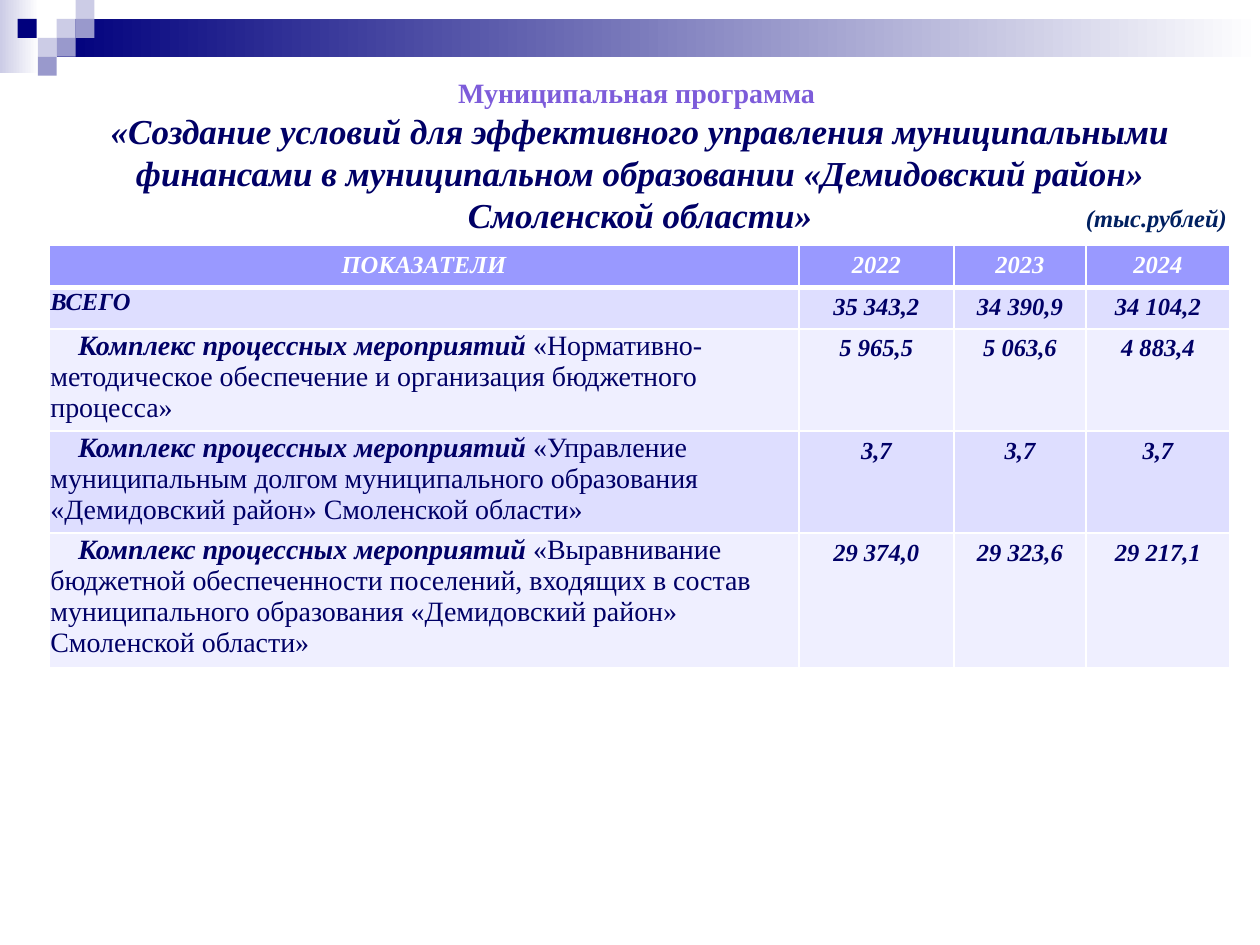
from dataclasses import dataclass

from lxml import etree
from pptx import Presentation
from pptx.dml.color import RGBColor
from pptx.enum.shapes import MSO_SHAPE
from pptx.enum.text import MSO_AUTO_SIZE, PP_ALIGN
from pptx.oxml.ns import qn
from pptx.util import Inches, Pt

RECTANGLE = MSO_SHAPE.RECTANGLE
CENTER, LEFT = PP_ALIGN.CENTER, PP_ALIGN.LEFT
FIT_SHAPE = MSO_AUTO_SIZE.SHAPE_TO_FIT_TEXT


@dataclass(frozen=True)
class Theme:
    font: str = "Times New Roman"
    navy: str = "00007D"
    lilac: str = "CCCCE6"
    lavender: str = "9999CC"
    white: str = "FFFFFF"
    ink: str = "000066"
    violet: str = "7D5CDA"
    unit_ink: str = "002060"
    header_fill: str = "9999FF"
    band_fills: tuple[str, str] = ("DEDEFF", "EFEFFF")
    small: int = 14
    body: int = 16
    title: int = 20


THEME = Theme()


@dataclass(frozen=True)
class Block:
    left: float
    top: float
    width: float
    height: float
    color: str
    fade_to: str | None = None


@dataclass(frozen=True)
class Span:
    text: str
    color: str = THEME.ink
    size: int = THEME.small
    bold: bool = True
    italic: bool = True


@dataclass(frozen=True)
class Indicator:
    label: tuple[Span, ...]
    values: tuple[str, str, str]
    height: float
    indent: float = 0


def measure(goal: str, values: tuple[str, str, str], height: float) -> Indicator:
    label = (Span("Комплекс процессных мероприятий ", size=THEME.body),
             Span(goal, size=THEME.body, bold=False, italic=False))
    return Indicator(label, values, height, indent=0.22)


# Corner ornament: bars first, then the small squares
TILE = 0.15
BLOCKS = (
    Block(0, 0, 0.31, 0.58, THEME.lilac, THEME.white),
    Block(0.45, 0.15, 9.55, 0.3, THEME.navy, THEME.white),
    *(Block(left, top, TILE, TILE, color) for left, top, color in (
        (0.45, 0.15, THEME.lilac), (0.6, 0, THEME.lilac),
        (0.6, 0.15, THEME.lavender), (0.3, 0.3, THEME.lilac),
        (0.14, 0.15, THEME.navy), (0.45, 0.3, THEME.lavender),
        (0.3, 0.45, THEME.lavender))),
)

TITLE = (
    Span("Муниципальная программа ", THEME.violet, THEME.body, italic=False),
    Span("«Создание условий для эффективного управления муниципальными финансами "
         "в муниципальном образовании «Демидовский район» Смоленской области»",
         size=THEME.title),
)
UNIT = Span("(тыс.рублей)", THEME.unit_ink)

# Table content
COLUMN_WIDTHS = (5.95, 1.23, 1.05, 1.14)
HEADER_HEIGHT = 0.33
HEADINGS = ("ПОКАЗАТЕЛИ", "2022", "2023", "2024")
INDICATORS = (
    Indicator((Span("ВСЕГО"),), ("35 343,2", "34 390,9", "34 104,2"), 0.33),
    measure("«Нормативно-методическое обеспечение и организация бюджетного процесса»",
            ("5 965,5", "5 063,6", "4 883,4"), 0.81),
    measure("«Управление муниципальным долгом муниципального образования "
            "«Демидовский район» Смоленской области»", ("3,7", "3,7", "3,7"), 0.81),
    measure("«Выравнивание бюджетной обеспеченности поселений, входящих в состав "
            "муниципального образования «Демидовский район» Смоленской области»",
            ("29 374,0", "29 323,6", "29 217,1"), 1.07),
)
LABEL_MARGINS = {"margin_left": Inches(0.01), "margin_top": Inches(0.01),
                 "margin_right": Inches(0.01), "margin_bottom": 0}


def apply_format(target, values: dict) -> None:
    for name, value in values.items():
        setattr(target, name, value)


def write_spans(paragraph, spans: tuple[Span, ...], align) -> None:
    paragraph.alignment = align
    for span in spans:
        run = paragraph.add_run()
        run.text = span.text
        apply_format(run.font, {"name": THEME.font, "size": Pt(span.size),
                                "bold": span.bold, "italic": span.italic})
        run.font.color.rgb = RGBColor.from_string(span.color)


def draw_block(slide, block: Block) -> None:
    shape = slide.shapes.add_shape(
        RECTANGLE, Inches(block.left), Inches(block.top),
        Inches(block.width), Inches(block.height))
    shape.shadow.inherit = False
    shape.line.fill.background()
    if block.fade_to is None:
        shape.fill.solid()
        shape.fill.fore_color.rgb = RGBColor.from_string(block.color)
        return
    shape.fill.gradient()
    shape.fill.gradient_angle = 0
    for stop, position, color in zip(shape.fill.gradient_stops, (0, 1),
                                     (block.color, block.fade_to)):
        stop.position = position
        stop.color.rgb = RGBColor.from_string(color)


def draw_text(slide, left: float, top: float, width: float, height: float,
              lines: tuple[Span, ...], align, wrap: bool) -> None:
    box = slide.shapes.add_textbox(Inches(left), Inches(top), Inches(width), Inches(height))
    frame = box.text_frame
    apply_format(frame, {"word_wrap": wrap, "auto_size": FIT_SHAPE})
    for index, line in enumerate(lines):
        paragraph = frame.add_paragraph() if index else frame.paragraphs[0]
        write_spans(paragraph, (line,), align)


def draw_cell(cell, spans: tuple[Span, ...], fill: str, align,
              bottom: int = 1, top: int = 1) -> None:
    properties = cell._tc.get_or_add_tcPr()
    for side, points in {"lnL": 1, "lnR": 1, "lnT": top, "lnB": bottom}.items():
        line = etree.SubElement(properties, qn(f"a:{side}"), w=str(Pt(points)))
        solid = etree.SubElement(line, qn("a:solidFill"))
        etree.SubElement(solid, qn("a:srgbClr"), val=THEME.white)
    cell.fill.solid()
    cell.fill.fore_color.rgb = RGBColor.from_string(fill)
    write_spans(cell.text_frame.paragraphs[0], spans, align)


def draw_table(slide, left: float, top: float) -> None:
    heights = (HEADER_HEIGHT, *(item.height for item in INDICATORS))
    table = slide.shapes.add_table(
        len(heights), len(COLUMN_WIDTHS), Inches(left), Inches(top),
        Inches(sum(COLUMN_WIDTHS)), Inches(sum(heights))).table
    for column, width in zip(table.columns, COLUMN_WIDTHS):
        column.width = Inches(width)
    for row, height in zip(table.rows, heights):
        row.height = Inches(height)

    for column, heading in enumerate(HEADINGS):
        draw_cell(table.cell(0, column), (Span(heading, THEME.white),),
                  THEME.header_fill, CENTER, bottom=3)

    for row, item in enumerate(INDICATORS, start=1):
        fill = THEME.band_fills[(row - 1) % 2]
        rule = 3 if row == 1 else 1
        label = table.cell(row, 0)
        draw_cell(label, item.label, fill, LEFT, top=rule)
        apply_format(label, LABEL_MARGINS)
        if item.indent:
            paragraph = label.text_frame.paragraphs[0]
            paragraph._p.get_or_add_pPr().set("indent", str(Inches(item.indent)))
        for column, value in enumerate(item.values, start=1):
            draw_cell(table.cell(row, column), (Span(value),), fill, CENTER, top=rule)


def main() -> None:
    deck = Presentation()
    apply_format(deck, {"slide_width": Inches(10), "slide_height": Inches(7.5)})
    slide = deck.slides.add_slide(deck.slide_layouts[6])
    for block in BLOCKS:
        draw_block(slide, block)
    draw_table(slide, 0.39, 1.95)
    draw_text(slide, 0.39, 0.55, 9.38, 1.38, TITLE, CENTER, wrap=True)
    draw_text(slide, 8.52, 1.56, 1.33, 0.34, (UNIT,), LEFT, wrap=False)
    deck.save("out.pptx")


if __name__ == "__main__":
    main()
